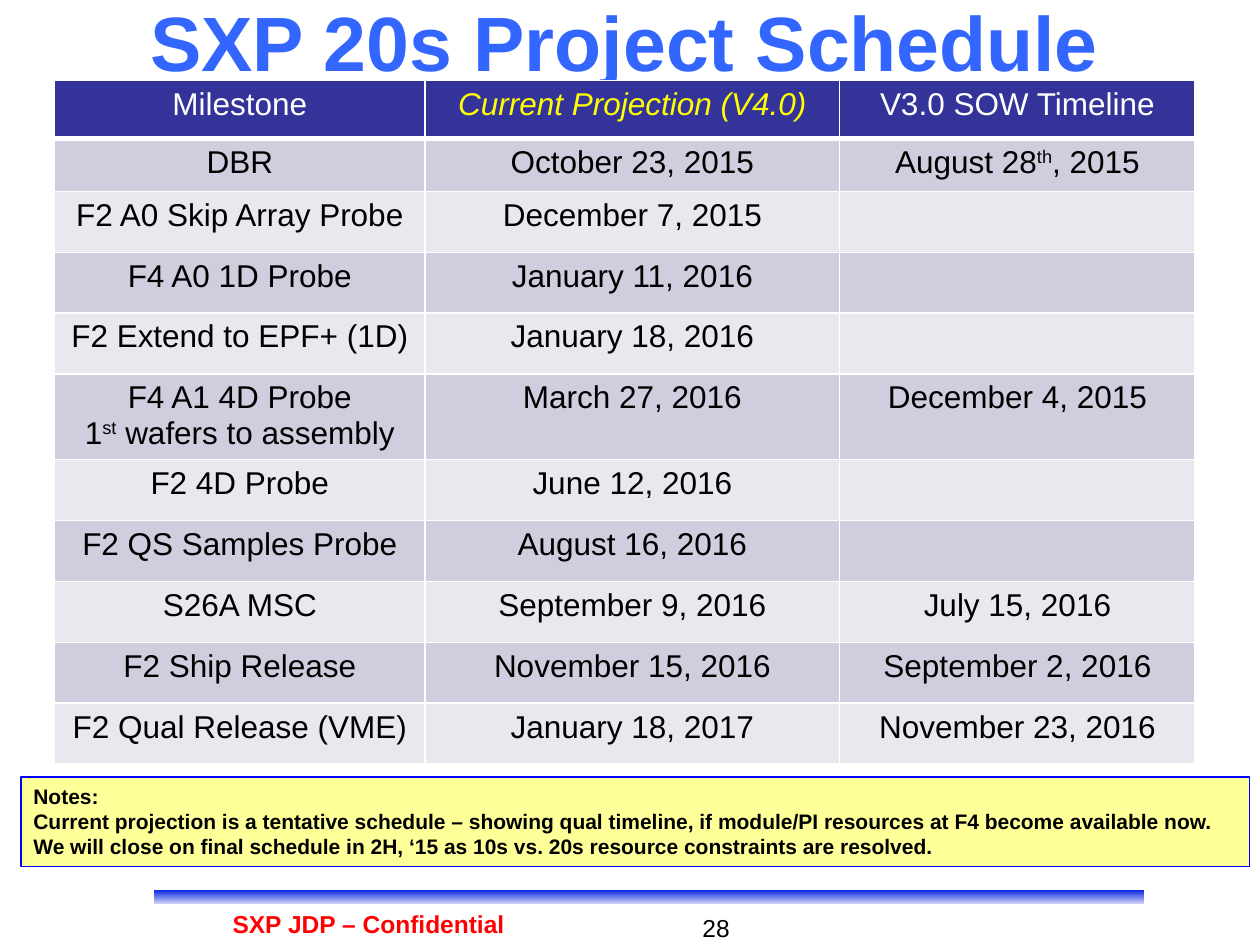
from pptx import Presentation
from pptx.dml.color import RGBColor
from pptx.enum.shapes import MSO_SHAPE
from pptx.enum.text import MSO_ANCHOR, MSO_AUTO_SIZE, PP_ALIGN
from pptx.oxml.ns import qn
from pptx.util import Pt
from lxml import etree

LEFT, CENTER, RIGHT = PP_ALIGN.LEFT, PP_ALIGN.CENTER, PP_ALIGN.RIGHT
TOP, MIDDLE = MSO_ANCHOR.TOP, MSO_ANCHOR.MIDDLE
RECTANGLE = MSO_SHAPE.RECTANGLE
NO_AUTOFIT = MSO_AUTO_SIZE.NONE

THEME = {
    "font": "Arial",
    "title": "3366FF", "text": "000000", "white": "FFFFFF",
    "header": "333399", "highlight": "FFFF00",
    "bands": ("CECEDE", "E8E8EF"),
    "note_fill": "FFFF99", "note_line": "0000FF",
    "bar": ("0020E0", "DADAF6"), "footer": "FF0000",
    "title_size": 44, "table_size": 18, "footer_size": 14, "note_size": 12,
}

TITLE = "SXP 20s Project Schedule"
HEADERS = ["Milestone", "Current Projection (V4.0)", "V3.0 SOW Timeline"]
# Text between carets is superscript.
MILESTONES = [
    ("DBR", "October 23, 2015", "August 28^th^, 2015"),
    ("F2 A0 Skip Array Probe", "December 7, 2015", ""),
    ("F4 A0 1D Probe", "January 11, 2016", ""),
    ("F2 Extend to EPF+ (1D)", "January 18, 2016", ""),
    ("F4 A1 4D Probe\n1^st^ wafers to assembly", "March 27, 2016", "December 4, 2015"),
    ("F2 4D Probe", "June 12, 2016", ""),
    ("F2 QS Samples Probe", "August 16, 2016", ""),
    ("S26A MSC", "September 9, 2016", "July 15, 2016"),
    ("F2 Ship Release", "November 15, 2016", "September 2, 2016"),
    ("F2 Qual Release (VME)", "January 18, 2017", "November 23, 2016"),
]
NOTES = (
    "Notes:\n"
    "Current projection is a tentative schedule – showing qual timeline, "
    "if module/PI resources at F4 become available now.\n"
    "We will close on final schedule in 2H, ‘15 as 10s vs. 20s resource "
    "constraints are resolved."
)
FOOTER = "SXP JDP – Confidential"
PAGE_NUMBER = "28"

COLUMN_WIDTHS = [211.7, 236.9, 203.2]
HEADER_HEIGHT, FIRST_HEIGHT, ROW_HEIGHT, TWO_LINE_HEIGHT = 33.1, 30.2, 34.8, 49


def color(value):
    return RGBColor.from_string(value)


def write(frame, text, size, fill="000000", bold=False, italic=False,
          align=LEFT, anchor=TOP):
    frame.word_wrap = True
    frame.vertical_anchor = anchor
    for index, line in enumerate(text.split("\n")):
        para = frame.add_paragraph() if index else frame.paragraphs[0]
        para.alignment = align
        para.font.size = Pt(size)
        for part, piece in enumerate(line.split("^")):
            if not piece:
                continue
            span = para.add_run()
            span.text = piece
            font = span.font
            font.name, font.size = THEME["font"], Pt(size)
            font.bold, font.italic = bold, italic
            font.color.rgb = color(fill)
            if part % 2:
                span.font._element.set("baseline", "30000")


def add_rectangle(page, place, line, width):
    box = page.shapes.add_shape(RECTANGLE, *map(Pt, place))
    box.shadow.inherit = False
    box.line.color.rgb = color(line)
    box.line.width = Pt(width)
    return box


def add_label(page, place, text, **style):
    box = page.shapes.add_textbox(*map(Pt, place))
    write(box.text_frame, text, THEME["footer_size"], **style)


def set_borders(cell, is_header, below_header):
    properties = cell._tc.get_or_add_tcPr()
    for position, side in enumerate(("lnL", "lnR", "lnT", "lnB")):
        thick = is_header and side == "lnB"
        line = etree.Element(qn("a:" + side), w=str(Pt(3 if thick else 1)))
        fill = etree.SubElement(line, qn("a:solidFill"))
        etree.SubElement(fill, qn("a:srgbClr"), val=THEME["white"])
        properties.insert(position, line)


def add_schedule(page):
    rows = [HEADERS, *MILESTONES]
    heights = [HEADER_HEIGHT, FIRST_HEIGHT] + [
        TWO_LINE_HEIGHT if "\n" in row[0] else ROW_HEIGHT for row in MILESTONES[1:]
    ]
    table = page.shapes.add_table(
        len(rows), len(HEADERS), Pt(31.2), Pt(46.1),
        Pt(sum(COLUMN_WIDTHS)), Pt(sum(heights)),
    ).table
    for column, width in zip(table.columns, COLUMN_WIDTHS):
        column.width = Pt(width)
    for r, (row, height) in enumerate(zip(rows, heights)):
        table.rows[r].height = Pt(height)
        for c, text in enumerate(row):
            cell = table.cell(r, c)
            is_header, is_current = r == 0, r == 0 and c == 1
            cell.fill.solid()
            cell.fill.fore_color.rgb = color(
                THEME["header"] if is_header else THEME["bands"][(r - 1) % 2])
            set_borders(cell, is_header, r == 1)
            ink = THEME["white"] if is_header else THEME["text"]
            write(cell.text_frame, text, THEME["table_size"], italic=is_current,
                  fill=THEME["highlight"] if is_current else ink, align=CENTER)


def main():
    deck = Presentation()
    deck.slide_width, deck.slide_height = Pt(720), Pt(540)
    page = deck.slides.add_slide(deck.slide_layouts[5])

    title = page.shapes.title
    title.left, title.top, title.width, title.height = map(Pt, (18, 7.9, 678.2, 31))
    title.text_frame.auto_size = NO_AUTOFIT
    write(title.text_frame, TITLE, THEME["title_size"], fill=THEME["title"],
          bold=True, align=CENTER, anchor=MIDDLE)

    bar = add_rectangle(page, (87.8, 508.3, 566.6, 8.6), THEME["white"], 1)
    bar.fill.gradient()
    bar.fill.gradient_angle = 270
    for stop, value in zip(bar.fill.gradient_stops, THEME["bar"]):
        stop.color.rgb = color(value)

    add_schedule(page)
    add_label(page, (342, 518.4, 82.1, 19.4), PAGE_NUMBER, align=RIGHT)
    add_label(page, (95.8, 516.2, 229.7, 18.7), FOOTER, fill=THEME["footer"],
              bold=True, align=CENTER)

    notes = add_rectangle(page, (12, 444, 702, 51.1), THEME["note_line"], 0.75)
    notes.fill.solid()
    notes.fill.fore_color.rgb = color(THEME["note_fill"])
    write(notes.text_frame, NOTES, THEME["note_size"], bold=True)

    deck.save("out.pptx")


if __name__ == "__main__":
    main()
